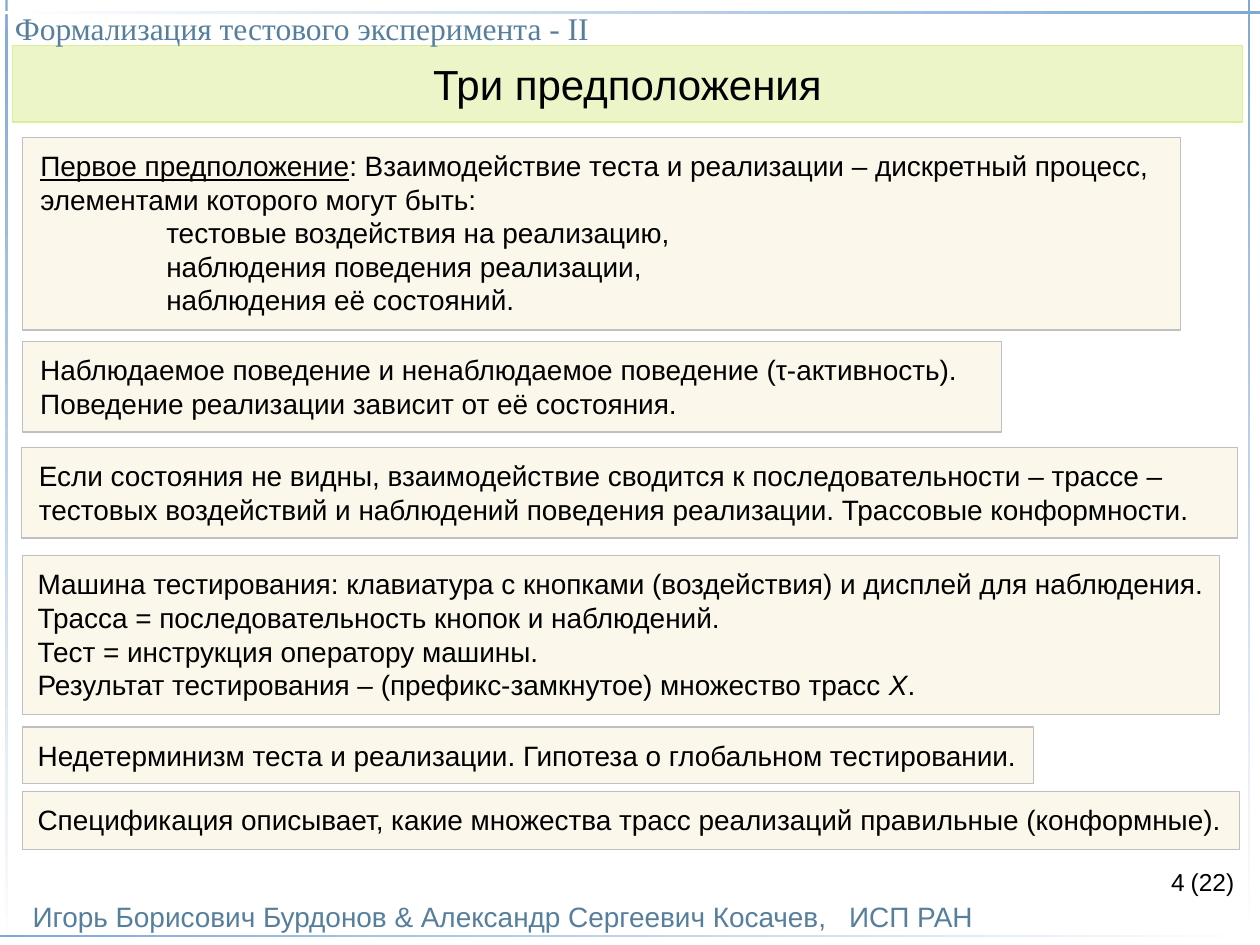
import pptx
import pptx.dml.color
import pptx.enum.shapes
import pptx.enum.text
import pptx.oxml
import pptx.oxml.ns
import pptx.util

Pt = pptx.util.Pt
Align = pptx.enum.text.PP_ALIGN
Anchor = pptx.enum.text.MSO_ANCHOR
RECTANGLE = pptx.enum.shapes.MSO_SHAPE.RECTANGLE

BLUE, WHITE, BLACK = "7FA9D3", "FFFFFF", "000000"
CAPTION = "567F9E"
TITLE_FILL, TITLE_LINE = "EBF5C7", "DBED97"
BOX_FILL, BOX_LINE = "FBF8EB", "C0C0C0"


def color(value):
    return pptx.dml.color.RGBColor.from_string(value)


class SlideBuilder:
    """Holds the text style and the current slide."""

    font = {"name": "Arial", "size": Pt(16), "bold": False}

    def __init__(self, presentation):
        self.slide = presentation.slides.add_slide(presentation.slide_layouts[5])

    def place(self, shape, bounds):
        for name, value in zip(("left", "top", "width", "height"), bounds):
            setattr(shape, name, Pt(value))

    def paint(self, shape, fill, line):
        shape.fill.solid()
        shape.fill.fore_color.rgb = color(fill)
        shape.line.color.rgb = color(line)
        shape.line.width = Pt(0.75)

    def set_text(self, shape, paragraphs, insets=(0, 0, 0, 0), anchor=Anchor.TOP,
                 align=Align.LEFT, tab=None, ink=BLACK, **font):
        """Each paragraph is a list of (text, run format) pairs."""
        frame = shape.text_frame
        left, top, right, bottom = map(Pt, insets)
        settings = {"margin_left": left, "margin_top": top, "margin_right": right,
                    "margin_bottom": bottom, "word_wrap": True,
                    "vertical_anchor": anchor,
                    "auto_size": pptx.enum.text.MSO_AUTO_SIZE.NONE}
        for name, value in settings.items():
            setattr(frame, name, value)
        for index, runs in enumerate(paragraphs):
            paragraph = frame.add_paragraph() if index else frame.paragraphs[0]
            paragraph.alignment = align
            if tab:
                self.add_tab(paragraph, tab)
            for text, run_format in runs:
                run = paragraph.add_run()
                run.text = text
                for name, value in {**self.font, **font, **run_format}.items():
                    setattr(run.font, name, value)
                run.font.color.rgb = color(ink)

    def add_tab(self, paragraph, position):
        properties = paragraph._p.get_or_add_pPr()
        tabs = pptx.oxml.parse_xml(
            f'<a:tabLst {pptx.oxml.ns.nsdecls("a")}>'
            f'<a:tab pos="{Pt(position)}" algn="l"/></a:tabLst>')
        properties.append(tabs)

    def fading_line(self, bounds, angle):
        shape = self.slide.shapes.add_shape(RECTANGLE, *map(Pt, bounds))
        shape.shadow.inherit = False
        shape.line.fill.background()
        shape.fill.gradient()
        shape.fill.gradient_angle = angle
        for stop, value in zip(shape.fill.gradient_stops, (BLUE, WHITE)):
            stop.color.rgb = color(value)

    def title(self, text, bounds):
        shape = self.slide.shapes.title
        self.place(shape, bounds)
        self.paint(shape, TITLE_FILL, TITLE_LINE)
        self.set_text(shape, [[(text, {})]], (0, 7.2, 0, 7.2), Anchor.MIDDLE,
                      Align.CENTER, size=Pt(24))

    def label(self, text, bounds, **style):
        shape = self.slide.shapes.add_textbox(*map(Pt, bounds))
        self.set_text(shape, [[(text, {})]], **style)

    def box(self, bounds, side_insets, paragraphs):
        shape = self.slide.shapes.add_shape(RECTANGLE, *map(Pt, bounds))
        shape.shadow.inherit = False
        self.paint(shape, BOX_FILL, BOX_LINE)
        left, right = side_insets
        self.set_text(shape, paragraphs, (left, 6.5, right, 6.5), tab=72)


def plain(*lines):
    return [[(line, {})] for line in lines]


def main():
    presentation = pptx.Presentation()
    presentation.slide_width, presentation.slide_height = Pt(720), Pt(540)
    builder = SlideBuilder(presentation)

    # Frame of fading lines
    for bounds, angle in (((3, 0, 1.4, 540), 270), ((0, 6.5, 720, 1.4), 180),
                          ((0, 534.2, 720, 1.4), 0), ((713, 0, 1.4, 540), 270)):
        builder.fading_line(bounds, angle)

    # Header, footer and page number
    builder.label("Формализация тестового эксперимента - II", (8.6, 5, 700, 21.6),
                  ink=CAPTION, name="Times New Roman", size=Pt(18))
    builder.label("Игорь Борисович Бурдонов & Александр Сергеевич Косачев,\tИСП РАН",
                  (18.7, 514, 560, 19.5), ink=CAPTION, anchor=Anchor.BOTTOM, tab=466.5)
    builder.label("4", (516, 495.4, 161, 17.3), align=Align.RIGHT, size=Pt(14))
    builder.label("(22)", (680.4, 495.4, 30, 17.3), size=Pt(14))

    # Title
    builder.title("Три предположения", (7.2, 25.9, 702.7, 43.9))

    # Statement boxes
    wide, narrow = (10, 10), (8.5, 5)
    first = [[("Первое предположение", {"underline": True}),
              (": Взаимодействие теста и реализации – дискретный процесс,", {})]]
    first += plain("элементами которого могут быть:",
                   "\tтестовые воздействия на реализацию,",
                   "\tнаблюдения поведения реализации,",
                   "\tнаблюдения её состояний.")
    machine = plain(
        "Машина тестирования: клавиатура с кнопками (воздействия) и дисплей для наблюдения.",
        "Трасса = последовательность кнопок и наблюдений.",
        "Тест = инструкция оператору машины.")
    machine.append([("Результат тестирования – (префикс-замкнутое) множество трасс ", {}),
                    ("X", {"italic": True}), (".", {})])
    boxes = (
        ((13, 78.5, 661.7, 110.2), wide, first),
        ((13, 195.1, 559.4, 51.8), wide, plain(
            "Наблюдаемое поведение и ненаблюдаемое поведение (τ-активность).",
            "Поведение реализации зависит от её состояния.")),
        ((12.2, 255.6, 694.8, 51.8), wide, plain(
            "Если состояния не видны, взаимодействие сводится к последовательности – трассе –",
            "тестовых воздействий и наблюдений поведения реализации. Трассовые конформности.")),
        ((13, 317.5, 684, 90.7), narrow, machine),
        ((13, 415.4, 577.4, 32.4), narrow, plain(
            "Недетерминизм теста и реализации. Гипотеза о глобальном тестировании.")),
        ((13, 452.2, 695.5, 33.1), narrow, plain(
            "Спецификация описывает, какие множества трасс реализаций правильные (конформные).")),
    )
    for bounds, side_insets, paragraphs in boxes:
        builder.box(bounds, side_insets, paragraphs)

    presentation.save("out.pptx")


if __name__ == "__main__":
    main()
